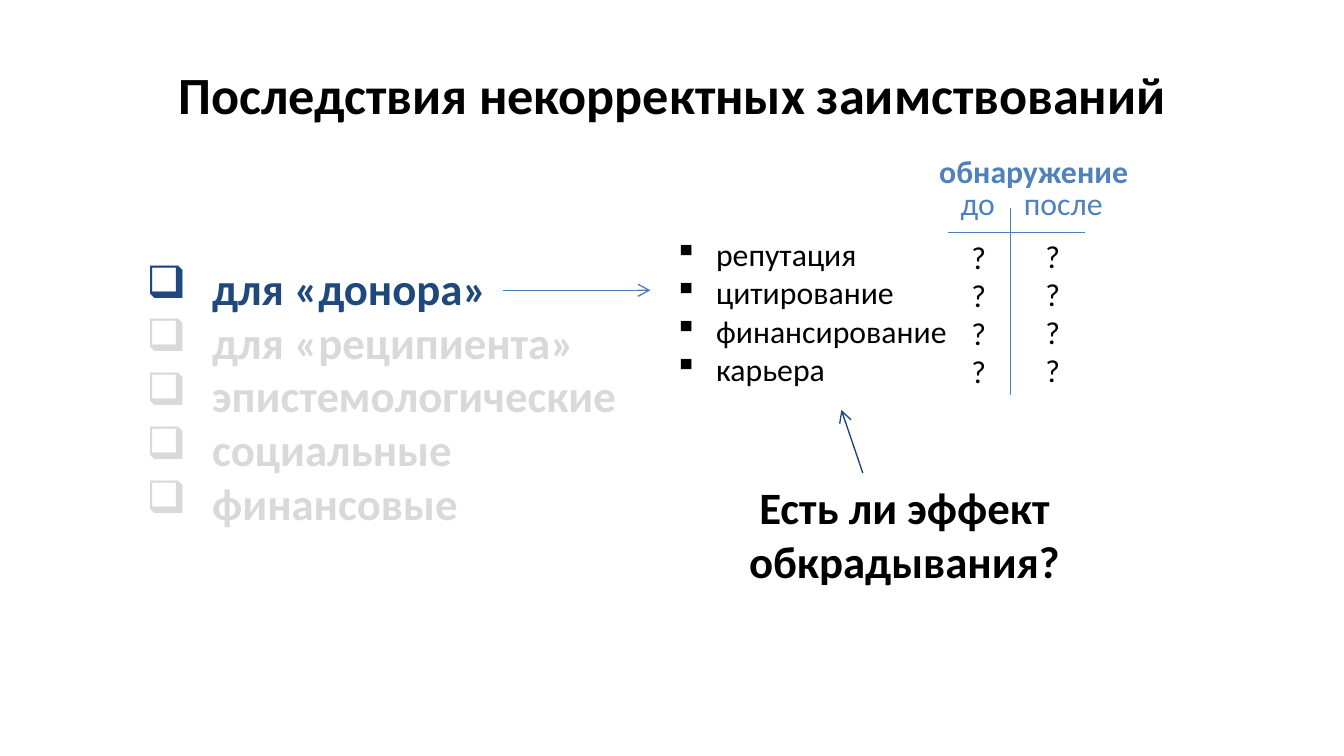
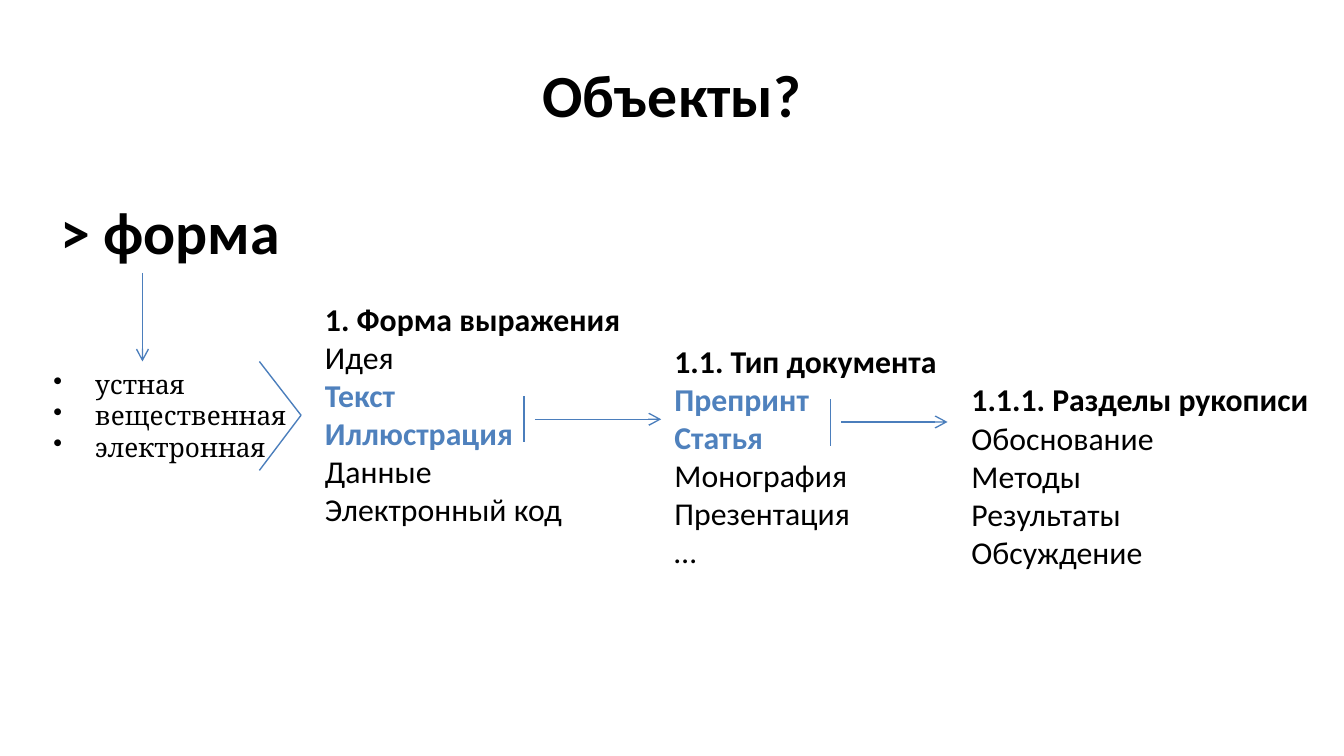
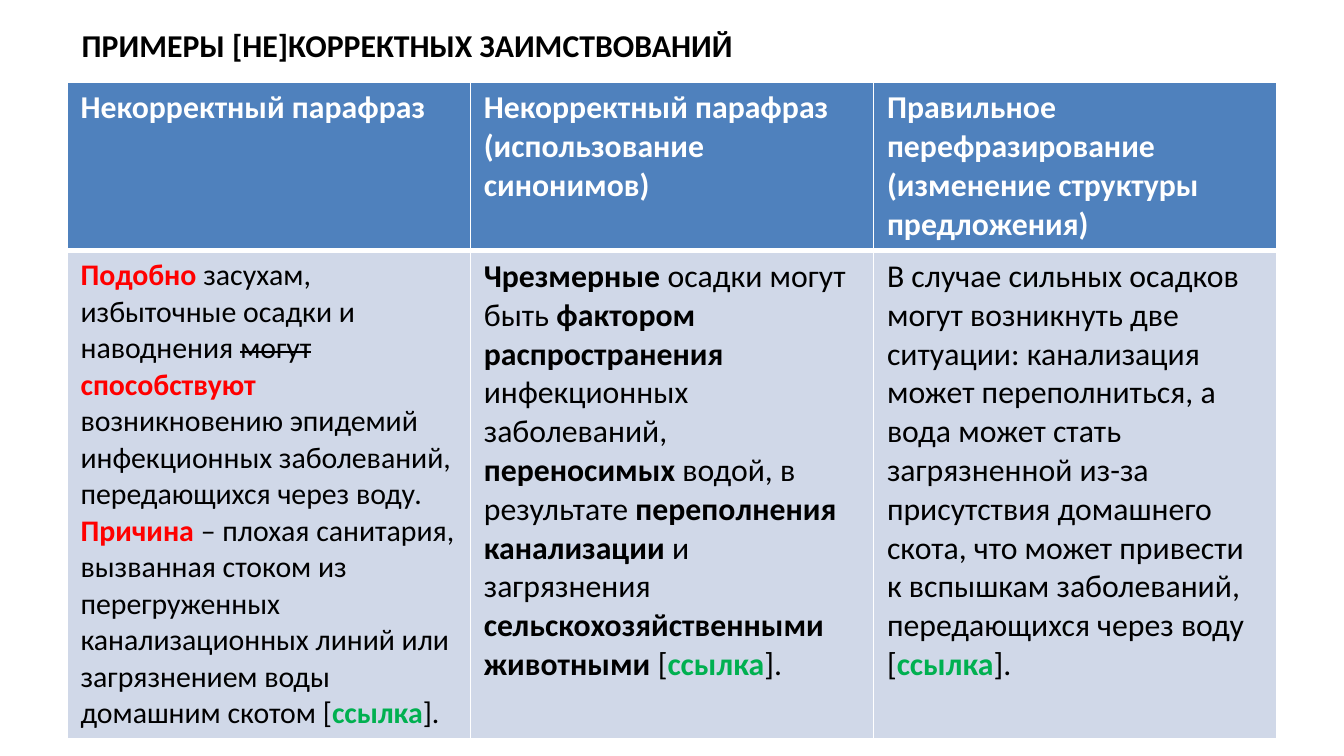
from dataclasses import dataclass
from typing import NamedTuple

from pptx import Presentation
from pptx.dml.color import RGBColor
from pptx.enum.shapes import MSO_CONNECTOR
from pptx.enum.text import MSO_ANCHOR, MSO_AUTO_SIZE, PP_ALIGN
from pptx.oxml.ns import qn
from pptx.slide import Slide
from pptx.table import _Cell as Cell
from pptx.text.text import Font, _Paragraph as Paragraph
from pptx.util import Inches, Pt
from lxml.etree import SubElement

BLACK, WHITE, BLUE, NAVY = "000000", "FFFFFF", "4F81BD", "1F497D"
LINE_BLUE, FADED, RED, GREEN, PALE = "4B7EBC", "D9D9D9", "FF0000", "00B050", "D0D8E8"
BODY_SIZE = 17


class Box(NamedTuple):
    left: float
    top: float
    width: float
    height: float


class Line(NamedTuple):
    start: tuple[float, float]
    end: tuple[float, float]
    arrow: bool = False
    color: str = LINE_BLUE


class Bullet(NamedTuple):
    symbol: str
    margin: float = 0.31
    hanging: float = 0.31


@dataclass(frozen=True)
class Item:
    """One paragraph of text in a single style."""
    text: str
    color: str = BLACK
    bold: bool = False
    size: float = BODY_SIZE
    font: str = "Calibri"
    bullet: Bullet | None = None
    align: PP_ALIGN = PP_ALIGN.LEFT


class Part(NamedTuple):
    """A stretch of text inside a table paragraph."""
    text: str
    color: str = BLACK
    bold: bool = False
    strike: bool = False


class Column(NamedTuple):
    heading: list[str]
    body: list[Part]
    size: float = BODY_SIZE


def rgb(color: str) -> RGBColor:
    return RGBColor.from_string(color)


def style_font(font: Font, size: float, color: str, bold: bool, name: str = "Calibri") -> None:
    font.name, font.size, font.bold = name, Pt(size), bold
    font.color.rgb = rgb(color)


def add_bullet(paragraph: Paragraph, bullet: Bullet) -> None:
    properties = paragraph._p.get_or_add_pPr()
    properties.set("marL", str(Inches(bullet.margin)))
    properties.set("indent", str(-Inches(bullet.hanging)))
    character = properties.makeelement(qn("a:buChar"), {"char": bullet.symbol})
    properties.insert(0, character)


def add_text(slide: Slide, box: Box, items: list[Item], wrap: bool = True) -> None:
    frame = slide.shapes.add_textbox(*map(Inches, box)).text_frame
    frame.word_wrap = wrap
    frame.auto_size = MSO_AUTO_SIZE.SHAPE_TO_FIT_TEXT
    for index, item in enumerate(items):
        paragraph = frame.add_paragraph() if index else frame.paragraphs[0]
        paragraph.text = item.text
        paragraph.alignment = item.align
        if item.bullet:
            add_bullet(paragraph, item.bullet)
        style_font(paragraph.font, item.size, item.color, item.bold, item.font)


def add_title(slide: Slide, text: str, size: float) -> None:
    frame = slide.shapes.add_textbox(*map(Inches, Box(0.5, 0.23, 9, 0.94))).text_frame
    frame.word_wrap = True
    frame.vertical_anchor = MSO_ANCHOR.MIDDLE
    paragraph = frame.paragraphs[0]
    paragraph.text = text
    paragraph.alignment = PP_ALIGN.CENTER
    style_font(paragraph.font, size, BLACK, True)


def add_line(slide: Slide, line: Line) -> None:
    connector = slide.shapes.add_connector(
        MSO_CONNECTOR.STRAIGHT, *map(Inches, line.start + line.end))
    connector.line.color.rgb = rgb(line.color)
    connector.line.width = Pt(0.75)
    if line.arrow:
        SubElement(connector.line._get_or_add_ln(), qn("a:tailEnd"), type="arrow")
    SubElement(connector._element.spPr, qn("a:effectLst"))


def style_cell(cell: Cell, fill: str, borders: dict[str, float]) -> None:
    """Fill the cell and give it white borders, widths in points by side."""
    properties = cell._tc.get_or_add_tcPr()
    for side, width in borders.items():
        border = SubElement(properties, qn(f"a:{side}"), w=str(Pt(width)))
        solid = SubElement(border, qn("a:solidFill"))
        SubElement(solid, qn("a:srgbClr"), val=WHITE)
    cell.fill.solid()
    cell.fill.fore_color.rgb = rgb(fill)


def add_columns_table(slide: Slide, box: Box, heading_height: float, columns: list[Column]) -> None:
    table = slide.shapes.add_table(2, len(columns), *map(Inches, box)).table
    table.horz_banding = False
    table.rows[0].height = Inches(heading_height)
    table.rows[1].height = Inches(box.height - heading_height)
    for index, column in enumerate(columns):
        heading, body = table.cell(0, index), table.cell(1, index)
        style_cell(heading, BLUE, {"lnL": 1, "lnR": 1, "lnT": 1, "lnB": 3})
        style_cell(body, PALE, {"lnL": 1, "lnR": 1, "lnT": 3, "lnB": 1})
        heading.text = "\n".join(column.heading)
        for paragraph in heading.text_frame.paragraphs:
            style_font(paragraph.font, BODY_SIZE, WHITE, True)
        paragraph = body.text_frame.paragraphs[0]
        for part in column.body:
            run = paragraph.add_run()
            run.text = part.text
            style_font(run.font, column.size, part.color, part.bold)
            if part.strike:
                run.font._element.set("strike", "sngStrike")


def build_consequences(slide: Slide) -> None:
    add_title(slide, "Последствия некорректных заимствований", 28)
    checkbox, square = Bullet("❑", 0.89, 0.49), Bullet("▪")
    groups = ["для «донора»", "для «реципиента»", "эпистемологические", "социальные", "финансовые"]
    add_text(slide, Box(0.59, 1.89, 8.9, 2.12), [
        Item(group, FADED if index else NAVY, True, 24, bullet=checkbox)
        for index, group in enumerate(groups)])

    effects = ["репутация", "цитирование", "финансирование", "карьера"]
    add_text(slide, Box(4.92, 1.7, 2.36, 1.25), [Item(effect, bullet=square) for effect in effects])
    add_text(slide, Box(6.89, 1.08, 1.97, 0.39), [Item("обнаружение", BLUE, True)])
    add_text(slide, Box(7.05, 1.32, 0.47, 0.39), [Item("до", BLUE)])
    add_text(slide, Box(7.52, 1.32, 0.79, 0.39), [Item("после", BLUE)])
    for left, top in [(7.13, 1.72), (7.68, 1.71)]:
        add_text(slide, Box(left, top, 0.47, 1.25), [Item("?")] * len(effects))
    add_text(slide, Box(5.39, 3.52, 2.68, 0.91), [
        Item("Есть ли эффект обкрадывания?", bold=True, size=24, align=PP_ALIGN.CENTER)])

    for line in [
        Line((3.74, 2.16), (4.84, 2.16), arrow=True),
        Line((7.52, 1.55), (7.52, 2.94)),
        Line((7.05, 1.73), (8.07, 1.73)),
        Line((6.42, 3.52), (6.26, 3.05), arrow=True, color=NAVY),
    ]:
        add_line(slide, line)


def build_objects(slide: Slide) -> None:
    add_title(slide, "Объекты?", 32)
    add_text(slide, Box(0.35, 1.4, 1.86, 0.64), [Item("> форма", bold=True, size=32)], wrap=False)
    add_text(slide, Box(0.3, 2.69, 1.97, 0.81), [
        Item(form, size=14, font="Cambria", bullet=Bullet("•"))
        for form in ["устная", "вещественная", "электронная"]])

    lists = [
        (Box(2.32, 2.18, 2.44, 1.82), "1. Форма выражения",
         ["Идея", "Текст", "Иллюстрация", "Данные", "Электронный код"]),
        (Box(4.92, 2.49, 2.2, 1.82), "1.1. Тип документа",
         ["Препринт", "Статья", "Монография", "Презентация", "…"]),
        (Box(7.13, 2.78, 3.07, 1.53), "1.1.1. Разделы рукописи",
         ["Обоснование", "Методы", "Результаты", "Обсуждение"]),
    ]
    highlighted = {"Текст", "Иллюстрация", "Препринт", "Статья"}
    for box, heading, entries in lists:
        add_text(slide, box, [Item(heading, bold=True)] + [
            Item(entry, BLUE, True) if entry in highlighted else Item(entry)
            for entry in entries])

    chevron_tip = (2.24, 3.09)
    for line in [
        Line((1.06, 2.03), (1.06, 2.69), arrow=True),
        Line((1.93, 2.69), chevron_tip),
        Line(chevron_tip, (1.93, 3.5)),
        Line((3.9, 2.95), (3.9, 3.29)),
        Line((3.98, 3.12), (4.92, 3.12), arrow=True),
        Line((6.18, 2.97), (6.18, 3.32)),
        Line((6.26, 3.14), (7.05, 3.14), arrow=True),
    ]:
        add_line(slide, line)


def build_examples(slide: Slide) -> None:
    reference = [Part("ссылка", GREEN, True), Part("].")]
    columns = [
        Column(["Некорректный парафраз"], [
            Part("Подобно ", RED, True),
            Part("засухам, избыточные осадки и наводнения "),
            Part("могут", strike=True),
            Part(" "),
            Part("способствуют ", RED, True),
            Part("возникновению эпидемий инфекционных заболеваний, передающихся через воду. "),
            Part("Причина ", RED, True),
            Part("– плохая санитария, вызванная стоком из перегруженных канализационных линий "
                 "или загрязнением воды домашним скотом ["),
            *reference], size=16),
        Column(["Некорректный парафраз", "(использование синонимов)"], [
            Part("Чрезмерные", bold=True),
            Part(" осадки могут быть "),
            Part("фактором распространения ", bold=True),
            Part("инфекционных заболеваний, "),
            Part("переносимых", bold=True),
            Part(" водой, в результате "),
            Part("переполнения канализации ", bold=True),
            Part("и загрязнения "),
            Part("сельскохозяйственными животными ", bold=True),
            Part("["),
            *reference]),
        Column(["Правильное перефразирование (изменение структуры предложения)"], [
            Part("В случае сильных осадков могут возникнуть две ситуации: канализация может "
                 "переполниться, а вода может стать загрязненной из-за присутствия домашнего "
                 "скота, что может привести к вспышкам заболеваний, передающихся через воду ["),
            *reference]),
    ]
    add_columns_table(slide, Box(0.5, 0.61, 9, 4.8), 1.24, columns)
    add_text(slide, Box(0.51, 0.14, 9.13, 0.39), [
        Item("ПРИМЕРЫ [НЕ]КОРРЕКТНЫХ ЗАИМСТВОВАНИЙ", bold=True)])


def main() -> None:
    presentation = Presentation()
    presentation.slide_width = Inches(10)
    presentation.slide_height = Inches(10 * 9 / 16)
    blank_layout = presentation.slide_layouts[6]
    for build in (build_consequences, build_objects, build_examples):
        build(presentation.slides.add_slide(blank_layout))
    presentation.save("out.pptx")


if __name__ == "__main__":
    main()
